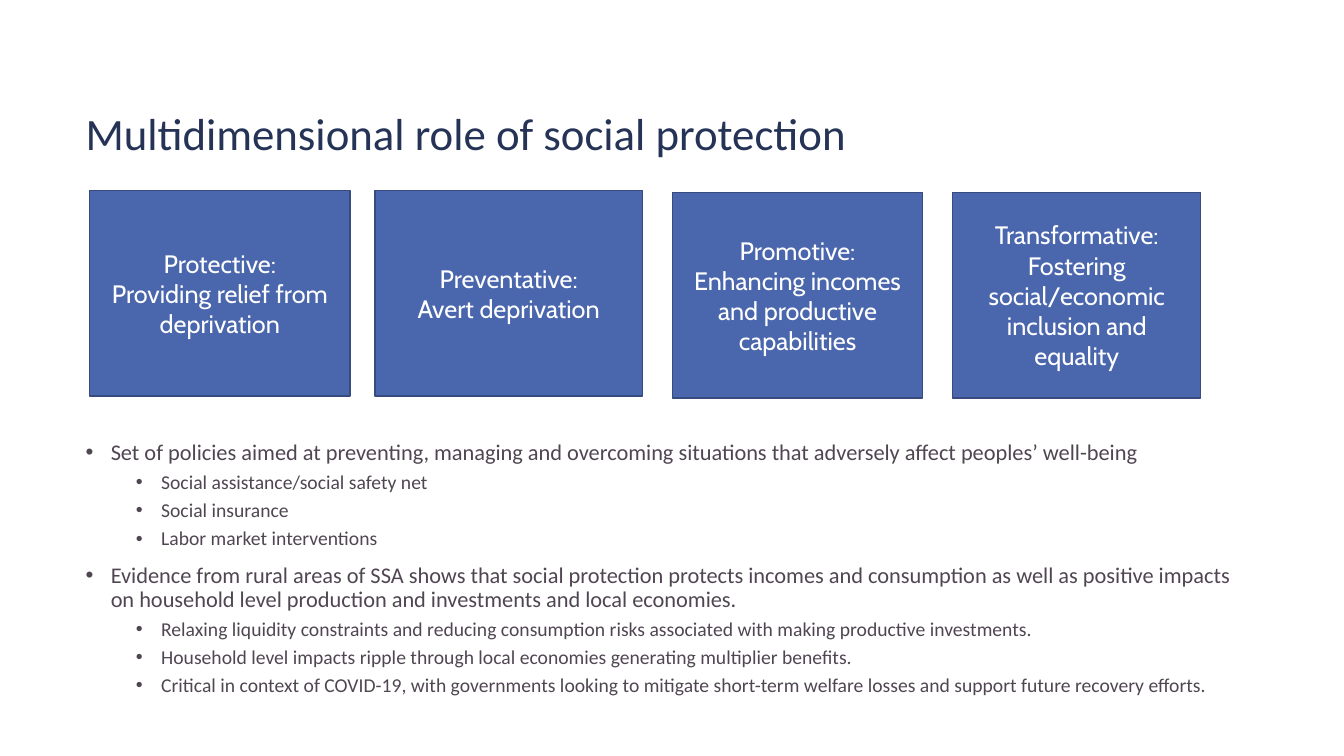
"""Build a slide on the multidimensional role of social protection."""
from pptx import Presentation
from pptx.dml.color import RGBColor
from pptx.enum.shapes import MSO_SHAPE as Shape
from pptx.enum.text import MSO_ANCHOR as Anchor, PP_ALIGN as Align
from pptx.oxml import parse_xml
from pptx.oxml.ns import nsdecls
from pptx.util import Inches, Pt

NAVY = RGBColor(0x25, 0x33, 0x56)
GREY = RGBColor(0x50, 0x46, 0x52)
BLUE = RGBColor(0x4A, 0x66, 0xAC)
EDGE = RGBColor(0x37, 0x4B, 0x7F)
WHITE = RGBColor(0xFF, 0xFF, 0xFF)

TITLE = "Multidimensional role of social protection"
ROLES = [
    ("Protective:", "Providing relief from deprivation"),
    ("Preventative:", "Avert deprivation"),
    ("Promotive:", "Enhancing incomes and productive capabilities"),
    ("Transformative:", "Fostering social/economic inclusion and equality"),
]
POINTS = [
    (0, "Set of policies aimed at preventing, managing and overcoming situations "
        "that adversely affect peoples’ well-being"),
    (1, "Social assistance/social safety net"),
    (1, "Social insurance"),
    (1, "Labor market interventions"),
    (0, "Evidence from rural areas of SSA shows that social protection protects "
        "incomes and consumption as well as positive impacts on household level "
        "production and investments and local economies."),
    (1, "Relaxing liquidity constraints and reducing consumption risks associated "
        "with making productive investments."),
    (1, "Household level impacts ripple through local economies generating "
        "multiplier benefits."),
    (1, "Critical in context of COVID-19, with governments looking to mitigate "
        "short-term welfare losses and support future recovery efforts."),
]

WIDTH, HEIGHT = 13.33, 7.5
MARGIN = 0.75
TITLE_AREA = (MARGIN, 0.62, 11.5, 1.45)
POINTS_AREA = (MARGIN, 4.33, 11.61, 2.8)
ROLE_COLUMNS = [(0.89, 2.58), (3.72, 2.65), (6.67, 2.48), (9.45, 2.46)]
ROLE_TOPS = [1.89, 1.89, 1.91, 1.91]
ROLE_HEIGHT = 2.04
LEVELS = [
    {"size": 16, "indent": 0.25, "before": 10},
    {"size": 14, "indent": 0.75, "before": 5},
]
HANGING = 0.25


def apply(target, formats):
    """Set each attribute of the target from a dict."""
    for name, value in formats.items():
        setattr(target, name, value)


def write(para, text, face, size, color):
    """Add one formatted span to a paragraph."""
    span = para.add_run()
    span.text = text
    apply(span.font, {"name": face, "size": Pt(size)})
    span.font.color.rgb = color


def paragraphs(frame, count):
    """Return the given number of paragraphs of a text frame."""
    return [frame.paragraphs[0]] + [frame.add_paragraph() for _ in range(count - 1)]


def add_box(page, area, anchor):
    """Add a wrapping text box and return its frame."""
    frame = page.shapes.add_textbox(*map(Inches, area)).text_frame
    apply(frame, {"word_wrap": True, "vertical_anchor": anchor})
    return frame


def add_title(page):
    """Add the slide title."""
    para = add_box(page, TITLE_AREA, Anchor.MIDDLE).paragraphs[0]
    para.line_spacing = 0.9
    write(para, TITLE, "Calibri", 32, NAVY)


def add_points(page):
    """Add the two-level bullet list."""
    frame = add_box(page, POINTS_AREA, Anchor.TOP)
    for index, para in enumerate(paragraphs(frame, len(POINTS))):
        depth, text = POINTS[index]
        level = LEVELS[depth]
        before = level["before"] if index else 0
        apply(para, {"level": depth, "line_spacing": 0.9, "space_before": Pt(before)})
        layout = para._p.get_or_add_pPr()
        layout.set("marL", str(Inches(level["indent"])))
        layout.set("indent", str(-Inches(HANGING)))
        layout.append(parse_xml(f'<a:buFont {nsdecls("a")} typeface="Arial"/>'))
        layout.append(parse_xml(f'<a:buChar {nsdecls("a")} char="•"/>'))
        write(para, text, "Calibri", level["size"], GREY)


def add_role(page, lines, column, top):
    """Add one filled card naming a role."""
    left, width = column
    area = map(Inches, (left, top, width, ROLE_HEIGHT))
    card = page.shapes.add_shape(Shape.RECTANGLE, *area)
    card.shadow.inherit = False
    card.fill.solid()
    card.fill.fore_color.rgb = BLUE
    card.line.color.rgb = EDGE
    card.line.width = Pt(1)
    frame = card.text_frame
    apply(frame, {"word_wrap": True, "vertical_anchor": Anchor.MIDDLE})
    for para, text in zip(paragraphs(frame, len(lines)), lines):
        para.alignment = Align.CENTER
        write(para, text, "Cabin", 18, WHITE)


def main():
    """Build and save the deck."""
    deck = Presentation()
    apply(deck, {"slide_width": Inches(WIDTH), "slide_height": Inches(HEIGHT)})
    page = deck.slides.add_slide(deck.slide_layouts[6])
    add_title(page)
    add_points(page)
    for lines, column, top in zip(ROLES, ROLE_COLUMNS, ROLE_TOPS):
        add_role(page, lines, column, top)
    deck.save("out.pptx")


if __name__ == "__main__":
    main()
